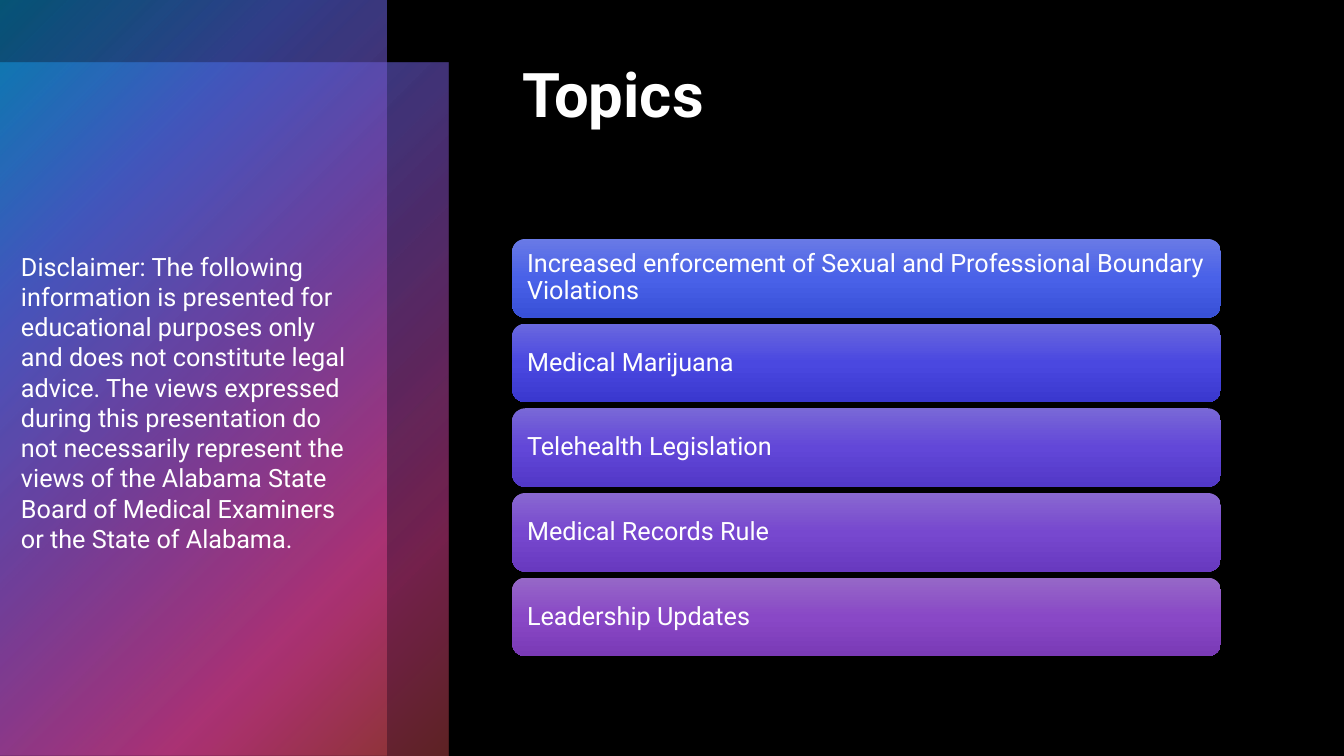
from dataclasses import dataclass

from pptx import Presentation
from pptx import util as u
from pptx.dml.color import RGBColor
from pptx.enum import shapes, text
from pptx.oxml import parse_xml
from pptx.oxml.ns import nsdecls, qn


@dataclass(frozen=True)
class Theme:
    font: str = "Roboto"
    background: str = "000000"
    ink: str = "FFFFFF"
    title_size: int = 44
    body_size: int = 18
    # Stops are (position %, colour, opacity %).
    glow: tuple = ((0, "0BA5E8", 50), (25, "5066E1", 60), (50, "894EC0", 55),
                   (81, "E54196", 50), (99, "BE4449", 50))
    bars: tuple = (("697AE6", "4961E8", "3850D7"),
                   ("6A68DF", "4A48E0", "3A38CF"),
                   ("7968D7", "6247D8", "5238C7"),
                   ("8968D0", "7748CF", "6839BF"),
                   ("9668C7", "8948C6", "7A3AB6"))


DOWNWARD = '<a:lin ang="5400000" scaled="0"/>'
FROM_TOP_LEFT = '<a:path path="circle"><a:fillToRect r="100000" b="100000"/></a:path>'

TOPICS = (
    "Increased enforcement of Sexual and Professional Boundary Violations",
    "Medical Marijuana",
    "Telehealth Legislation",
    "Medical Records Rule",
    "Leadership Updates",
)
DISCLAIMER = (
    "Disclaimer: The following information is presented for educational purposes only "
    "and does not constitute legal advice. The views expressed during this presentation "
    "do not necessarily represent the views of the Alabama State Board of Medical "
    "Examiners or the State of Alabama."
)


class SlideBuilder:
    def __init__(self, presentation, theme):
        self.theme = theme
        self.slide = presentation.slides.add_slide(presentation.slide_layouts[5])
        fill = self.slide.background.fill
        fill.solid()
        fill.fore_color.rgb = RGBColor.from_string(theme.background)

    def set_text(self, frame, words, size, bold=False, spacing=None):
        frame.word_wrap = True
        paragraph = frame.paragraphs[0]
        paragraph.alignment = text.PP_ALIGN.LEFT
        paragraph.line_spacing = spacing
        run = paragraph.add_run()
        run.text = words
        run.font.name = self.theme.font
        run.font.size = u.Pt(size)
        run.font.bold = bold
        run.font.color.rgb = RGBColor.from_string(self.theme.ink)

    def title(self, words, *box):
        title = self.slide.shapes.title
        title.left, title.top, title.width, title.height = map(u.Inches, box)
        frame = title.text_frame
        frame.auto_size = text.MSO_AUTO_SIZE.NONE
        frame.vertical_anchor = text.MSO_ANCHOR.TOP
        self.set_text(frame, words, self.theme.title_size, bold=True)

    def gradient_shape(self, kind, stops, direction, *box):
        shape = self.slide.shapes.add_shape(kind, *map(u.Inches, box))
        shape.shadow.inherit = False
        shape.line.fill.background()
        shape.fill.gradient()
        stop_xml = "".join(
            f'<a:gs pos="{position * 1000}"><a:srgbClr val="{color}">'
            f'<a:alpha val="{opacity * 1000}"/></a:srgbClr></a:gs>'
            for position, color, opacity in stops)
        properties = shape.element.spPr
        properties.replace(
            properties.find(qn("a:gradFill")),
            parse_xml(f'<a:gradFill {nsdecls("a")} rotWithShape="1">'
                      f"<a:gsLst>{stop_xml}</a:gsLst>{direction}</a:gradFill>"))
        return shape

    def glow_panel(self, *box):
        self.gradient_shape(shapes.MSO_SHAPE.RECTANGLE, self.theme.glow,
                            FROM_TOP_LEFT, *box)

    def topic_bar(self, words, colors, *box):
        stops = [(position, color, 100) for position, color in zip((0, 50, 100), colors)]
        bar = self.gradient_shape(shapes.MSO_SHAPE.ROUNDED_RECTANGLE, stops,
                                  DOWNWARD, *box)
        frame = bar.text_frame
        frame.margin_left = frame.margin_right = u.Inches(0.11)
        frame.vertical_anchor = text.MSO_ANCHOR.MIDDLE
        self.set_text(frame, words, self.theme.body_size, spacing=0.9)

    def text_box(self, words, *box):
        shape = self.slide.shapes.add_textbox(*map(u.Inches, box))
        self.set_text(shape.text_frame, words, self.theme.body_size)


def main():
    presentation = Presentation()
    presentation.slide_width = u.Inches(13.33)
    presentation.slide_height = u.Inches(7.5)
    theme = Theme()
    builder = SlideBuilder(presentation, theme)

    builder.glow_panel(0, 0.62, 4.45, 6.88)
    builder.glow_panel(0, 0, 3.83, 7.5)
    builder.title("Topics", 5.08, 0.5, 7.03, 1.7)
    for row, (topic, colors) in enumerate(zip(TOPICS, theme.bars)):
        builder.topic_bar(topic, colors, 5.08, 2.37 + row * 0.84, 7.03, 0.78)
    builder.text_box(DISCLAIMER, 0.11, 2.44, 3.59, 3.43)

    presentation.save("out.pptx")


if __name__ == "__main__":
    main()
